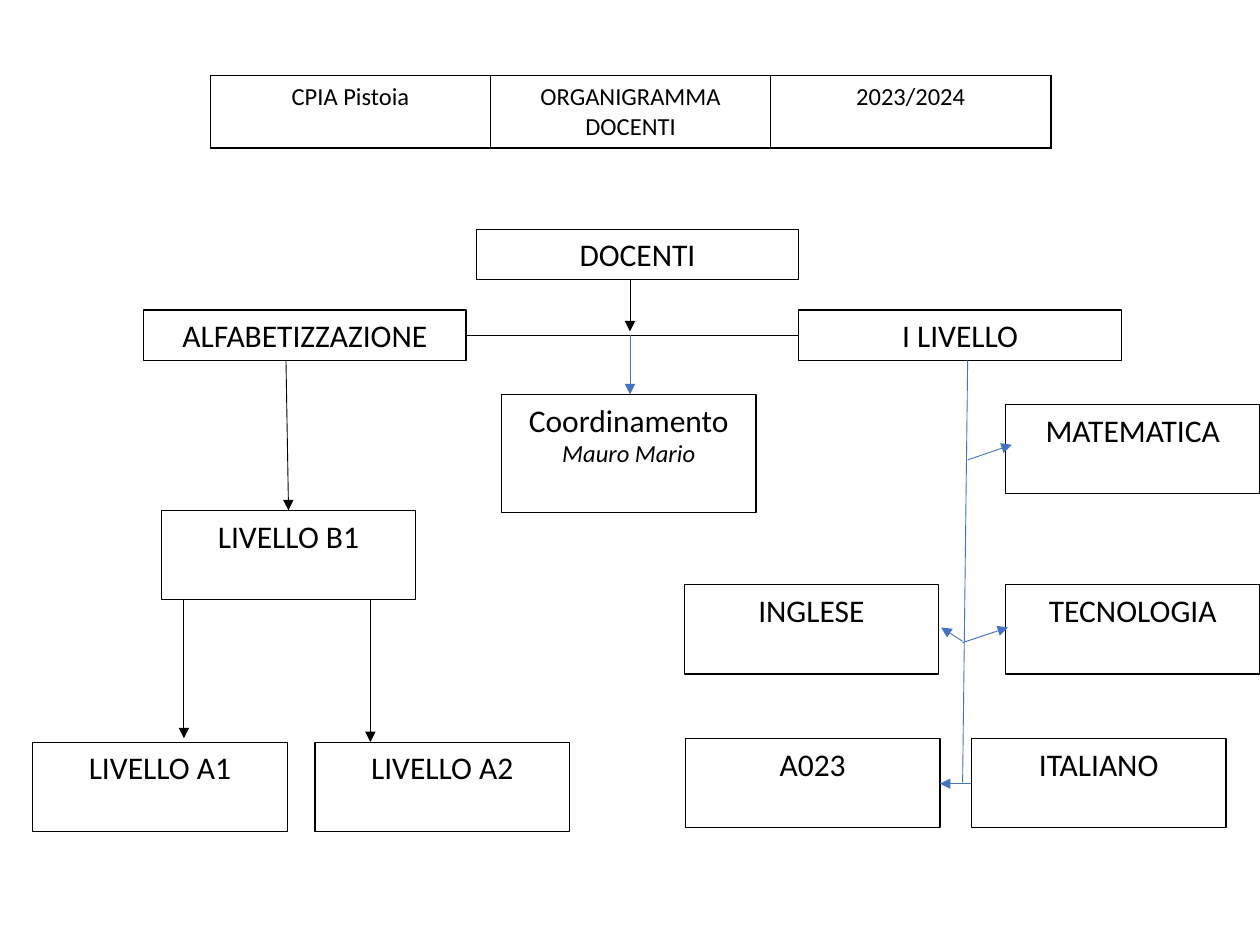
from lxml import etree
from pptx import Presentation
from pptx.dml.color import RGBColor
from pptx.enum.shapes import MSO_CONNECTOR
from pptx.enum.text import MSO_ANCHOR, PP_ALIGN
from pptx.oxml.ns import qn
from pptx.util import Inches, Pt

STRAIGHT = MSO_CONNECTOR.STRAIGHT
TOP = MSO_ANCHOR.TOP
CENTER = PP_ALIGN.CENTER

BLACK = RGBColor(0x00, 0x00, 0x00)
BLUE = RGBColor(0x44, 0x72, 0xC4)

HEADING = {"name": "Calibri", "size": Pt(18)}
HEADER = {"name": "Calibri", "size": Pt(14)}
PERSON = {"name": "Calibri", "size": Pt(14), "italic": True}

HEADER_CELLS = ["CPIA Pistoia", "ORGANIGRAMMA\nDOCENTI", "2023/2024"]

GROUP_SIZE = (2.56, 0.4)
GROUPS = [
    ("DOCENTI", 3.78, 1.82),
    ("ALFABETIZZAZIONE", 1.14, 2.46),
    ("I LIVELLO", 6.34, 2.46),
]

UNIT_SIZE = (2.02, 0.71)
UNITS = [
    ("LIVELLO B1", 1.28, 4.05),
    ("LIVELLO A1", 0.26, 5.89),
    ("LIVELLO A2", 2.5, 5.89),
    ("MATEMATICA", 7.98, 3.21),
    ("TECNOLOGIA", 7.98, 4.64),
    ("INGLESE", 5.43, 4.64),
    ("ITALIANO", 7.71, 5.86),
    ("A023", 5.44, 5.86),
]

LINES = [
    ((3.7, 2.66), (6.34, 2.66), BLACK),
    ((7.68, 2.86), (7.64, 6.21), BLUE),
]

ARROWS = [
    ((5, 2.22), (5, 2.63), BLACK),
    ((5, 2.66), (5, 3.13), BLUE),
    ((2.27, 2.86), (2.29, 4.05), BLACK),
    ((1.46, 4.75), (1.46, 5.86), BLACK),
    ((2.94, 4.75), (2.94, 5.89), BLACK),
    ((7.68, 3.65), (8.03, 3.53), BLUE),
    ((7.64, 5.1), (8, 4.98), BLUE),
    ((7.64, 5.09), (7.47, 4.98), BLUE),
    ((7.71, 6.22), (7.46, 6.22), BLUE),
]


def format_paragraph(paragraph, values):
    paragraph.alignment = CENTER
    for name, value in values.items():
        setattr(paragraph.font, name, value)
    paragraph.font.color.rgb = BLACK


def add_box(slide, left, top, size, lines):
    shape = slide.shapes.add_textbox(*map(Inches, (left, top, *size)))
    shape.line.color.rgb = BLACK
    shape.line.width = Pt(0.75)
    text_frame = shape.text_frame
    text_frame.word_wrap = True
    text_frame.vertical_anchor = TOP
    text_frame.text = "\n".join(text for text, _ in lines)
    for paragraph, (_, values) in zip(text_frame.paragraphs, lines):
        format_paragraph(paragraph, values)


def add_line(slide, start, end, color, arrow=False):
    connector = slide.shapes.add_connector(STRAIGHT, *map(Inches, (*start, *end)))
    connector.line.color.rgb = color
    connector.line.width = Pt(0.5)
    properties = connector._element.spPr
    etree.SubElement(properties, qn("a:effectLst"))
    if arrow:
        etree.SubElement(properties.find(qn("a:ln")), qn("a:tailEnd"), type="triangle")


def add_cell_borders(cell):
    properties = cell._tc.get_or_add_tcPr()
    for side in ("lnL", "lnR", "lnT", "lnB"):
        border = etree.SubElement(properties, qn(f"a:{side}"), w=str(Pt(1)))
        fill = etree.SubElement(border, qn("a:solidFill"))
        etree.SubElement(fill, qn("a:srgbClr"), val=str(BLACK))


def add_header_table(slide):
    bounds = map(Inches, (1.67, 0.6, 6.67, 0.57))
    table = slide.shapes.add_table(1, len(HEADER_CELLS), *bounds).table
    for cell, text in zip(table.rows[0].cells, HEADER_CELLS):
        add_cell_borders(cell)
        cell.fill.background()
        cell.text = text
        for paragraph in cell.text_frame.paragraphs:
            format_paragraph(paragraph, HEADER)


def main():
    presentation = Presentation()
    presentation.slide_width = Inches(10)
    presentation.slide_height = Inches(7.5)
    slide = presentation.slides.add_slide(presentation.slide_layouts[6])

    add_header_table(slide)
    for size, boxes in ((GROUP_SIZE, GROUPS), (UNIT_SIZE, UNITS)):
        for text, left, top in boxes:
            add_box(slide, left, top, size, [(text, HEADING)])
    coordination = [("Coordinamento", HEADING), ("Mauro Mario", PERSON)]
    add_box(slide, 3.98, 3.13, (2.02, 0.94), coordination)
    for line in LINES:
        add_line(slide, *line)
    for arrow in ARROWS:
        add_line(slide, *arrow, arrow=True)

    presentation.save("out.pptx")


if __name__ == "__main__":
    main()
